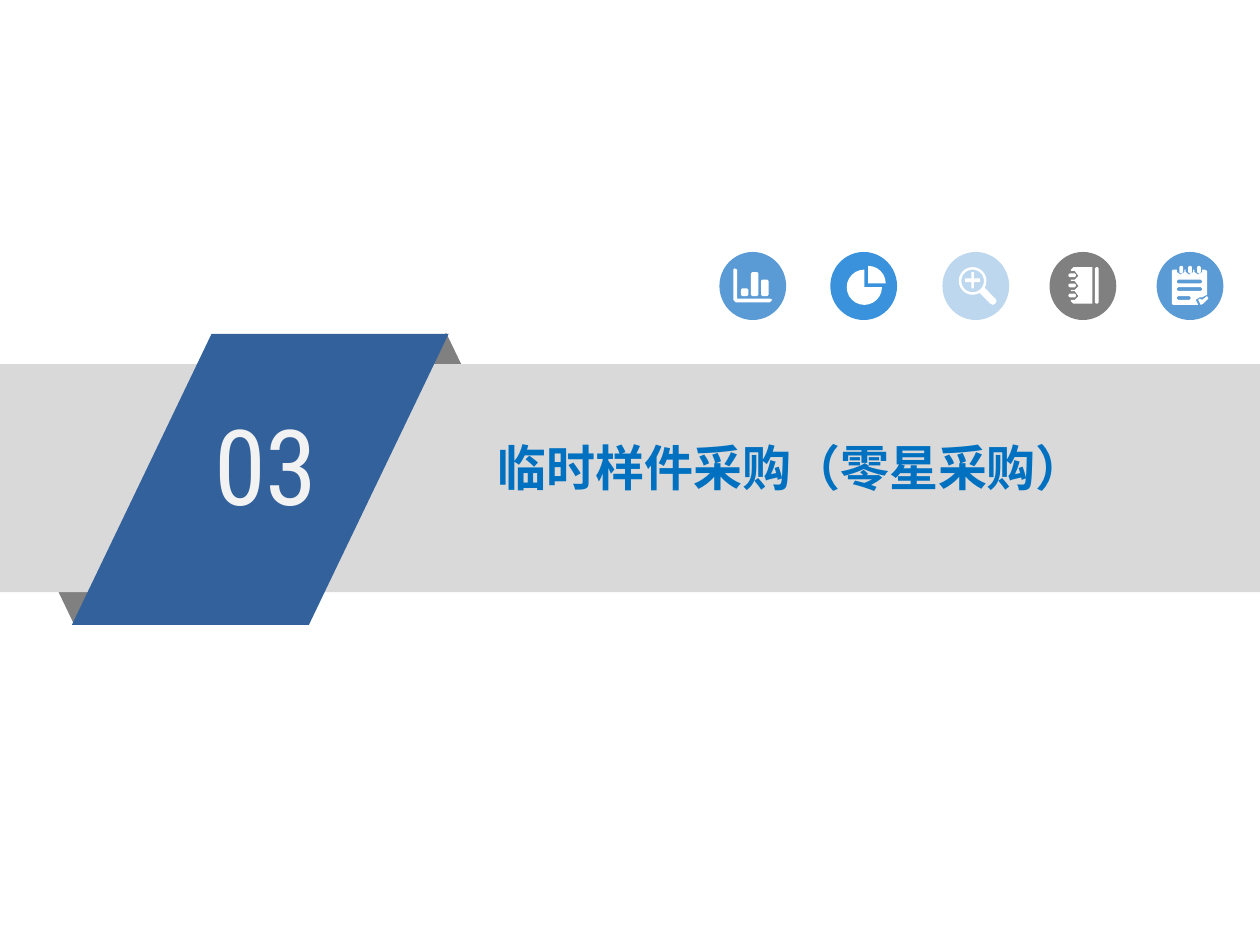
import math
from dataclasses import dataclass

import pptx
import pptx.dml.color
import pptx.enum.shapes
import pptx.enum.text
import pptx.oxml
import pptx.oxml.ns
import pptx.util

Inches = pptx.util.Inches
Kind = pptx.enum.shapes.MSO_SHAPE


@dataclass(frozen=True)
class Theme:
    white: str = "FFFFFF"
    band: str = "D9D9D9"
    gray: str = "808080"
    navy: str = "32619C"
    blue: str = "5B9BD5"
    azure: str = "3992DB"
    pale: str = "BDD7EE"
    title: str = "0070C0"
    number: str = "F2F2F2"
    title_size: int = 28
    number_size: int = 60
    title_font: str = "Noto Sans CJK SC"
    number_font: str = "Roboto Condensed"


THEME = Theme()


def paint(shape, color):
    shape.shadow.inherit = False
    shape.fill.solid()
    shape.fill.fore_color.rgb = pptx.dml.color.RGBColor.from_string(color)
    shape.line.fill.background()
    return shape


class Region:
    """A group whose parts are placed in inches from its left top corner."""

    def __init__(self, slide, left, top):
        self.shapes = slide.shapes.add_group_shape().shapes
        self.left, self.top = left, top

    def add(self, kind, box, color):
        x, y, w, h = box
        shape = self.shapes.add_shape(kind, Inches(self.left + x), Inches(self.top + y),
                                      Inches(w), Inches(h))
        return paint(shape, color)

    def outline(self, loops, color):
        """Draw one freeform from closed loops; an inner loop is a hole."""
        paths = [[(Inches(self.left + x), Inches(self.top + y)) for x, y in loop]
                 for loop in loops]
        pen = self.shapes.build_freeform(*paths[0][0], scale=1.0)
        for index, spots in enumerate(paths):
            if index:
                pen.move_to(*spots[0])
            pen.add_line_segments(spots[1:], close=True)
        return paint(pen.convert_to_shape(), color)


def slab(x, y, w, h, cut=0.01):
    """Corners of a box with its corners cut off, clockwise."""
    r, b = x + w, y + h
    return [(x + cut, y), (r - cut, y), (r, y + cut), (r, b - cut),
            (r - cut, b), (x + cut, b), (x, b - cut), (x, y + cut)]


def arc(x, y, radius, start, sweep, step=15):
    turns = [math.radians(start + turn) for turn in range(0, sweep + 1, step)]
    return [(x + radius * math.cos(t), y + radius * math.sin(t)) for t in turns]


def bars():
    axes = [(0.11, 0.14), (0.12, 0.13), (0.14, 0.14), (0.14, 0.37), (0.4, 0.37),
            (0.42, 0.38), (0.4, 0.4), (0.13, 0.4), (0.11, 0.38)]
    sizes = ((0.17, 0.06), (0.25, 0.19), (0.33, 0.13))
    return [axes] + [slab(x, 0.35 - h, 0.06, h) for x, h in sizes]


def pie():
    return [[(0.3, 0.25)] + arc(0.3, 0.25, 0.14, -90, 90),
            [(0.27, 0.28)] + arc(0.27, 0.28, 0.14, 0, 270)]


def lens():
    grip = [(0.42, 0.37), (0.43, 0.39), (0.42, 0.41), (0.4, 0.42), (0.38, 0.41)]
    plus = [(0.23, 0.16), (0.25, 0.16), (0.25, 0.21), (0.3, 0.21), (0.3, 0.24),
            (0.25, 0.24), (0.25, 0.29), (0.23, 0.29), (0.23, 0.24), (0.18, 0.24),
            (0.18, 0.21), (0.23, 0.21)]
    hole = arc(0.24, 0.23, 0.09, 0, 345)[::-1]
    return [arc(0.24, 0.23, 0.11, 60, 330) + grip, hole, plus]


def book():
    cover = [(0.19, 0.12), (0.34, 0.12), (0.34, 0.41), (0.19, 0.41), (0.17, 0.39)]
    rings = []
    for y in (0.33, 0.25, 0.17):
        cover += [(0.17, y + 0.05), (0.2, y + 0.05), (0.23, y + 0.02),
                  (0.2, y - 0.02), (0.17, y - 0.02)]
        rings.append(slab(0.15, y, 0.06, 0.03))
    return [slab(0.36, 0.12, 0.03, 0.29), cover + [(0.17, 0.14)]] + rings


def notes():
    page, pins = [(0.13, 0.14)], []
    for x in (0.19, 0.26, 0.33):
        page += [(x - 0.03, 0.14), (x - 0.03, 0.16), (x, 0.18),
                 (x + 0.03, 0.16), (x + 0.03, 0.14)]
        pins.append(slab(x - 0.01, 0.11, 0.03, 0.06))
    page += [(0.38, 0.14), (0.4, 0.15), (0.4, 0.34), (0.38, 0.35), (0.36, 0.36),
             (0.34, 0.36), (0.31, 0.38), (0.33, 0.42), (0.13, 0.42), (0.12, 0.41),
             (0.12, 0.15)]
    check = [(0.33, 0.38), (0.34, 0.37), (0.36, 0.38), (0.4, 0.35),
             (0.41, 0.37), (0.37, 0.41), (0.35, 0.42)]
    rows = ((0.22, 0.2), (0.28, 0.2), (0.35, 0.11))
    lines = [slab(0.16, y, w, 0.03)[::-1] for y, w in rows]
    return [page, check] + lines + pins


def draw_icons(slide, left, top):
    icons = ((3.47, THEME.blue, notes), (1.77, THEME.pale, lens),
             (2.62, THEME.gray, book), (0, THEME.blue, bars),
             (0.88, THEME.azure, pie))
    for x, color, sign in icons:
        icon = Region(slide, left + x, top)
        icon.add(Kind.OVAL, (0, 0, 0.53, 0.54), color)
        icon.outline(sign(), THEME.white)


def write(shapes, box, text, font, size, color, inset, bold=False):
    area = shapes.add_textbox(*[Inches(n) for n in box])
    frame = area.text_frame
    frame.word_wrap = True
    frame.auto_size = pptx.enum.text.MSO_AUTO_SIZE.SHAPE_TO_FIT_TEXT
    frame.margin_left = frame.margin_right = Inches(inset)
    frame.margin_top = frame.margin_bottom = Inches(0.04)
    frame.text = text
    run = frame.paragraphs[0].runs[0]
    run.font.name, run.font.size, run.font.bold = font, pptx.util.Pt(size), bold
    run.font.color.rgb = pptx.dml.color.RGBColor.from_string(color)
    east = pptx.oxml.parse_xml(f'<a:ea {pptx.oxml.ns.nsdecls("a")} typeface="{font}"/>')
    run.font._element.append(east)


def draw_banner(slide, left, top, width):
    """Gray band with a slanted number ribbon folded around it."""
    part = Region(slide, left, top)
    part.add(Kind.ISOSCELES_TRIANGLE, (3.03, 0, 1.02, 1.06), THEME.gray)
    fold = part.add(Kind.ISOSCELES_TRIANGLE, (0.08, 1.26, 1.02, 1.06), THEME.gray)
    fold._element.spPr.xfrm.set("flipV", "1")
    part.add(Kind.RECTANGLE, (0, 0.25, width, 1.81), THEME.band)
    ribbon = part.add(Kind.PARALLELOGRAM, (0.57, 0.01, 2.99, 2.31), THEME.navy)
    ribbon.adjustments[0] = 0.48
    write(part.shapes, (left + 1.63, top + 0.5, 1.45, 1.09), "03",
          THEME.number_font, THEME.number_size, THEME.number, 0.07)
    write(slide.shapes, (left + 3.87, top + 0.79, 5.31, 0.55), "临时样件采购（零星采购）",
          THEME.title_font, THEME.title_size, THEME.title, 0.08, bold=True)


def main():
    deck = pptx.Presentation()
    deck.slide_width, deck.slide_height = Inches(10), Inches(7.5)
    slide = deck.slides.add_slide(deck.slide_layouts[6])
    draw_banner(slide, 0, 2.64, 10)
    draw_icons(slide, 5.71, 2)
    deck.save("out.pptx")


if __name__ == "__main__":
    main()
